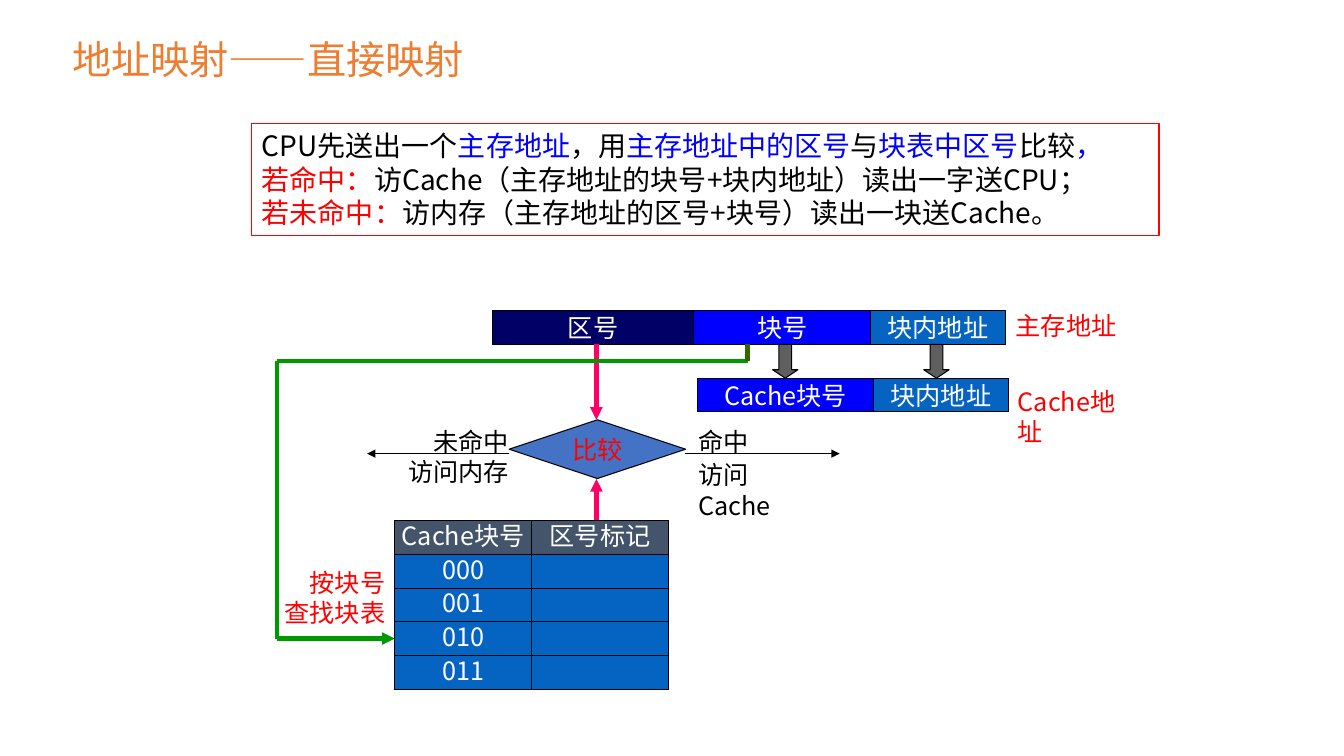
"""Build the slide on direct address mapping between main memory and cache."""
from lxml import etree
from pptx import Presentation
from pptx import util as u
from pptx.dml.color import RGBColor
from pptx.enum import shapes, text
from pptx.oxml import parse_xml
from pptx.oxml.ns import nsdecls, qn

THEME = {
    "font": "Noto Sans CJK SC", "title_font": "Times New Roman",
    "title": 28, "body": 20, "label": 18, "thin": 0.75, "thick": 3,
    "orange": "ED7D31", "black": "000000", "white": "FFFFFF", "red": "FF0000",
    "blue": "0000FF", "navy": "000066", "azure": "0563C1", "steel": "4472C4",
    "slate": "44546A", "grey": "5F5F5F", "pink": "FF0066", "green": "009900",
    "olive": "336600",
}
LEFT, CENTER, RIGHT = text.PP_ALIGN.LEFT, text.PP_ALIGN.CENTER, text.PP_ALIGN.RIGHT
ROW = 0.85


def color(name):
    return RGBColor.from_string(THEME[name])


def write(tf, paragraphs, size="label", align=LEFT, font="font"):
    for i, runs in enumerate(paragraphs):
        p = tf.paragraphs[0] if i == 0 else tf.add_paragraph()
        p.alignment = align
        p.line_spacing = u.Pt(round(THEME[size] * 1.2, 1))
        for wording, ink in runs:
            r = p.add_run()
            r.text = wording
            r.font.size = u.Pt(THEME[size])
            r.font.name = THEME[font]
            r.font.color.rgb = color(ink)
            ea = etree.SubElement(r.font._element, qn("a:ea"))
            ea.set("typeface", THEME["font"])


prs = Presentation()
prs.slide_width, prs.slide_height = u.Cm(33.87), u.Cm(19.05)
s = prs.slides.add_slide(prs.slide_layouts[5])

title = s.shapes.title
title.left, title.top, title.width, title.height = u.Cm(1.57), u.Cm(0.76), u.Cm(16.71), u.Cm(1.45)
title.text_frame.auto_size = text.MSO_AUTO_SIZE.NONE
title.text_frame.vertical_anchor = text.MSO_ANCHOR.MIDDLE
write(title.text_frame, [[("地址映射——直接映射", "orange")]], "title", font="title_font")

summary = s.shapes.add_textbox(u.Cm(6.35), u.Cm(3.12), u.Cm(22.86), u.Cm(2.82))
summary.line.color.rgb = color("red")
summary.line.width = u.Pt(THEME["thin"])
summary.text_frame.word_wrap = True
write(summary.text_frame, [
    [("CPU先送出一个", "black"), ("主存地址", "blue"), ("，用", "black"),
     ("主存地址中的区号", "blue"), ("与", "black"), ("块表中区号", "blue"),
     ("比较", "black"), ("，", "blue")],
    [("若命中：", "red"), ("访Cache（主存地址的块号+块内地址）读出一字送CPU；", "black")],
    [("若未命中：", "red"), ("访内存（主存地址的区号+块号）读出一块送Cache。", "black")],
], "body")

RECT = shapes.MSO_SHAPE.RECTANGLE
DOWN = shapes.MSO_SHAPE.DOWN_ARROW
blocks = [
    (RECT, 12.41, 7.83, 5.08, ROW, "navy", "区号", "white"),
    (RECT, 17.49, 7.83, 4.45, ROW, "blue", "块号", "white"),
    (RECT, 21.94, 7.83, 3.39, ROW, "azure", "块内地址", "white"),
    (RECT, 17.57, 9.53, 4.45, ROW, "blue", "Cache块号", "white"),
    (RECT, 22.02, 9.53, 3.39, ROW, "azure", "块内地址", "white"),
    (shapes.MSO_SHAPE.DIAMOND, 12.83, 10.58, 4.45, 1.48, "steel", "比较", "red"),
    (DOWN, 19.47, 8.68, 0.64, ROW, "grey", "", "white"),
    (DOWN, 23.28, 8.68, 0.64, ROW, "grey", "", "white"),
]
for kind, x, y, w, h, fill, wording, ink in blocks:
    sp = s.shapes.add_shape(kind, u.Cm(x), u.Cm(y), u.Cm(w), u.Cm(h))
    sp.shadow.inherit = False
    sp.fill.solid()
    sp.fill.fore_color.rgb = color(fill)
    sp.line.color.rgb = color("black")
    sp.line.width = u.Pt(THEME["thin"])
    if kind == DOWN:
        sp.adjustments[1] = 0.33
    if wording:
        sp.text_frame.word_wrap = False
        sp.text_frame.vertical_anchor = text.MSO_ANCHOR.MIDDLE
        write(sp.text_frame, [[(wording, ink)]], align=CENTER)

lines = [
    (15.03, 8.68, 15.03, 10.58, "pink", "thick", True),
    (15.03, 13.12, 15.03, 12.07, "pink", "thick", True),
    (12.83, 11.43, 9.25, 11.43, "black", "thin", True),
    (17.27, 11.43, 21.16, 11.43, "black", "thin", True),
    (18.84, 9.1, 6.99, 9.1, "green", "thick", False),
    (6.99, 9.1, 6.99, 16.09, "green", "thick", False),
    (6.99, 16.09, 9.95, 16.09, "green", "thick", True),
    (18.84, 9.1, 18.84, 8.68, "olive", "thick", False),
]
for x1, y1, x2, y2, ink, weight, arrow in lines:
    cx = s.shapes.add_connector(shapes.MSO_CONNECTOR.STRAIGHT,
                                u.Cm(x1), u.Cm(y1), u.Cm(x2), u.Cm(y2))
    cx.line.color.rgb = color(ink)
    cx.line.width = u.Pt(THEME[weight])
    if arrow:
        etree.SubElement(cx.line._get_or_add_ln(), qn("a:tailEnd")).set("type", "triangle")
    etree.SubElement(cx._element.spPr, qn("a:effectLst"))

labels = [
    (17.35, 10.62, 1.9, 1.02, ["命中"], "black", LEFT),
    (17.35, 11.46, 3.18, 1.8, ["访问Cache"], "black", LEFT),
    (10.01, 10.62, 3.07, 1.78, ["未命中", "访问内存"], "black", RIGHT),
    (5.08, 14.17, 4.88, 1.78, ["按块号", "查找块表"], "red", RIGHT),
    (25.35, 7.7, 3.3, 1.02, ["主存地址"], "red", LEFT),
    (25.4, 9.6, 3.18, 1.78, ["Cache地址"], "red", LEFT),
]
for x, y, w, h, wordings, ink, align in labels:
    tb = s.shapes.add_textbox(u.Cm(x), u.Cm(y), u.Cm(w), u.Cm(h))
    tb.text_frame.word_wrap = True
    write(tb.text_frame, [[(wording, ink)] for wording in wordings], align=align)

rows = [("Cache块号", "区号标记"), ("000", ""), ("001", ""), ("010", ""), ("011", "")]
block_table = s.shapes.add_table(len(rows), 2, u.Cm(9.95), u.Cm(13.12),
                                 u.Cm(6.9), u.Cm(ROW * len(rows))).table
block_table.first_row = block_table.horz_banding = False
for i, row in enumerate(rows):
    block_table.rows[i].height = u.Cm(ROW)
    for j, wording in enumerate(row):
        cell = block_table.cell(i, j)
        cell.margin_left = cell.margin_right = cell.margin_top = cell.margin_bottom = 0
        cell.vertical_anchor = text.MSO_ANCHOR.MIDDLE
        for side in ("lnL", "lnR", "lnT", "lnB"):
            cell._tc.get_or_add_tcPr().append(parse_xml(
                f'<a:{side} {nsdecls("a")} w="{u.Pt(THEME["thin"])}"><a:solidFill>'
                f'<a:srgbClr val="{THEME["black"]}"/></a:solidFill></a:{side}>'))
        cell.fill.solid()
        cell.fill.fore_color.rgb = color("azure" if i else "slate")
        write(cell.text_frame, [[(wording, "white")] if wording else []], align=CENTER)

prs.save("out.pptx")
